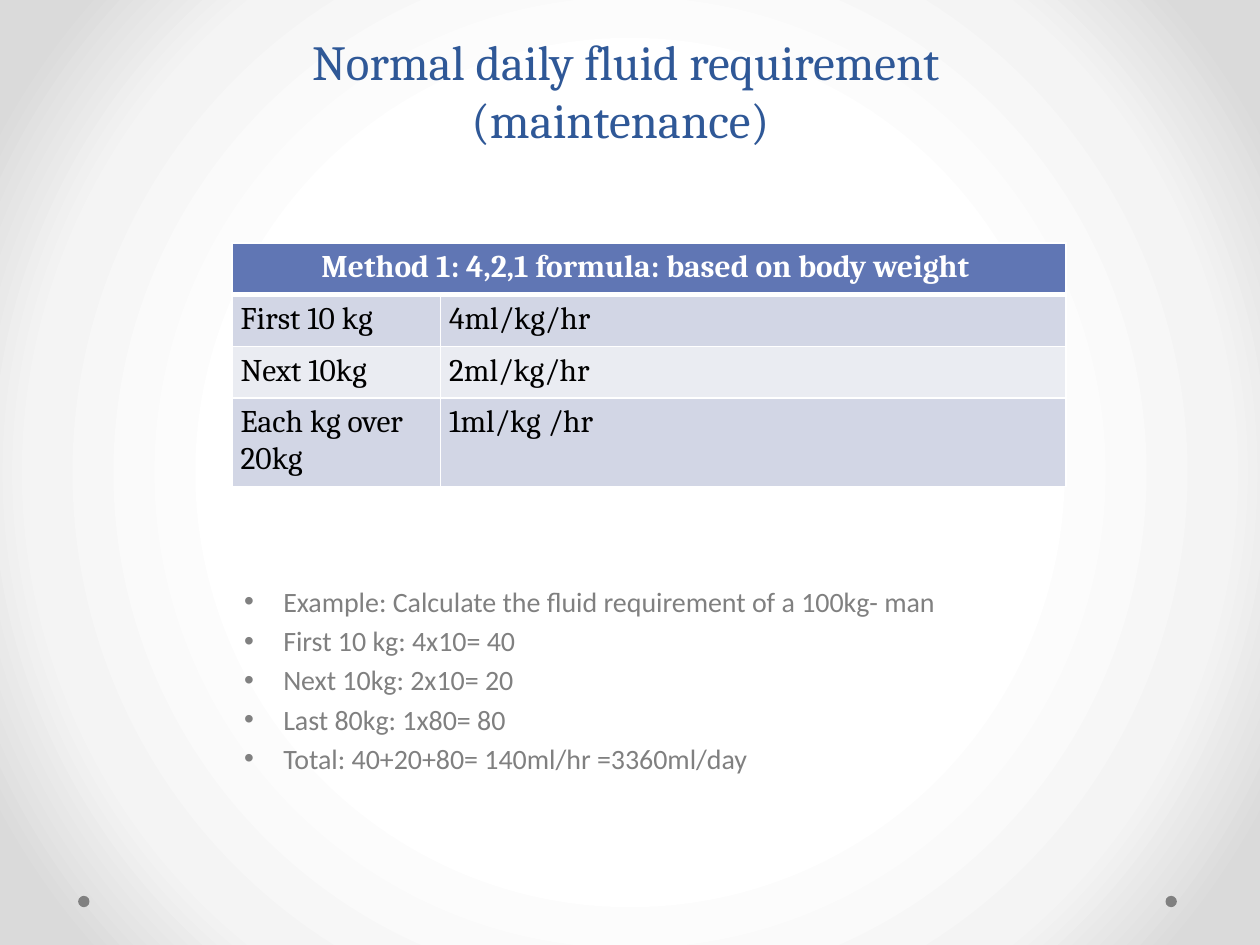
from lxml.etree import SubElement
from pptx import Presentation
from pptx.dml.color import RGBColor
from pptx.enum.shapes import MSO_SHAPE
from pptx.enum.text import MSO_ANCHOR, PP_ALIGN
from pptx.oxml import parse_xml
from pptx.oxml.ns import nsdecls, qn
from pptx.util import Inches, Pt

COLORS = {
    "title": "2F5897",
    "header": "6076B4",
    "odd_row": "D2D6E5",
    "even_row": "EAECF2",
    "white": "FFFFFF",
    "black": "000000",
    "gray": "808080",
}
GRADIENT_STOPS = [(50, "FFFFFF"), (76, "F4F4F4"), (92, "DADADA")]
TITLE = "Normal daily fluid requirement (maintenance) "
METHOD = "Method 1: 4,2,1 formula: based on body weight "
RATES = [
    ("First 10 kg", "4ml/kg/hr"),
    ("Next 10kg", "2ml/kg/hr"),
    ("Each kg over 20kg", "1ml/kg /hr"),
]
EXAMPLE = [
    "Example: Calculate the fluid requirement of a 100kg- man",
    "First 10 kg: 4x10= 40",
    "Next 10kg: 2x10= 20",
    "Last 80kg: 1x80= 80",
    "Total: 40+20+80= 140ml/hr =3360ml/day",
]


def color(name):
    return RGBColor.from_string(COLORS[name])


def format_paragraph(paragraph, font_name, size, color_name, bold=False):
    for run in paragraph.runs:
        run.font.name = font_name
        run.font.size = Pt(size)
        run.font.bold = bold
        run.font.color.rgb = color(color_name)


def set_background(slide):
    stops = "".join(
        f'<a:gs pos="{position * 1000}"><a:srgbClr val="{value}"/></a:gs>'
        for position, value in GRADIENT_STOPS
    )
    background = parse_xml(
        f'<p:bg {nsdecls("p", "a")}><p:bgPr><a:gradFill rotWithShape="1">'
        f'<a:gsLst>{stops}</a:gsLst><a:path path="circle">'
        '<a:fillToRect l="50000" t="50000" r="50000" b="50000"/></a:path>'
        "</a:gradFill><a:effectLst/></p:bgPr></p:bg>"
    )
    slide.element.find(qn("p:cSld")).insert(0, background)


def add_corner_dot(slide, left, top, size):
    dot = slide.shapes.add_shape(MSO_SHAPE.OVAL, left, top, size, size)
    dot.shadow.inherit = False
    dot.fill.solid()
    dot.fill.fore_color.rgb = color("gray")
    dot.line.fill.background()


def add_title(slide, left, top, width, height):
    text_frame = slide.shapes.add_textbox(left, top, width, height).text_frame
    text_frame.word_wrap = True
    text_frame.vertical_anchor = MSO_ANCHOR.BOTTOM
    text_frame.text = TITLE
    paragraph = text_frame.paragraphs[0]
    paragraph.alignment = PP_ALIGN.CENTER
    format_paragraph(paragraph, "Cambria", 28, "title")


def style_cell(cell, fill_name, color_name, bottom_width, bold):
    cell.margin_left = cell.margin_right = Inches(0.07)
    cell.margin_top = cell.margin_bottom = Inches(0.05)
    format_paragraph(cell.text_frame.paragraphs[0], "Cambria", 18, color_name, bold)
    properties = cell._tc.get_or_add_tcPr()
    for side, width in (("L", 1), ("R", 1), ("T", 1), ("B", bottom_width)):
        border = SubElement(properties, qn(f"a:ln{side}"), w=str(Pt(width)))
        fill = SubElement(border, qn("a:solidFill"))
        SubElement(fill, qn("a:srgbClr"), val=COLORS["white"])
    cell.fill.solid()
    cell.fill.fore_color.rgb = color(fill_name)


def add_rate_table(slide, left, top, width, row_height):
    row_count = len(RATES) + 1
    table = slide.shapes.add_table(
        row_count, 2, left, top, width, row_height * row_count
    ).table
    table.columns[0].width = width // 4
    table.columns[1].width = width - width // 4
    for row in table.rows:
        row.height = row_height
    header = table.cell(0, 0)
    header.merge(table.cell(0, 1))
    header.text_frame.text = METHOD
    header.text_frame.paragraphs[0].alignment = PP_ALIGN.CENTER
    for column in range(2):
        style_cell(table.cell(0, column), "header", "white", 3, True)
    for row, rate in enumerate(RATES, start=1):
        for column, text in enumerate(rate):
            cell = table.cell(row, column)
            cell.text_frame.text = text
            fill_name = "odd_row" if row % 2 else "even_row"
            style_cell(cell, fill_name, "black", 1, False)
            if row == 1:
                top_border = cell._tc.tcPr.find(qn("a:lnT"))
                top_border.set("w", str(Pt(3)))


def add_example(slide, left, top, width, height):
    text_frame = slide.shapes.add_textbox(left, top, width, height).text_frame
    text_frame.word_wrap = True
    text_frame.text = "\n".join(EXAMPLE)
    for paragraph in text_frame.paragraphs:
        format_paragraph(paragraph, "Calibri", 16, "gray")
        properties = paragraph._p.get_or_add_pPr()
        properties.set("marL", str(Inches(0.31)))
        properties.set("indent", str(-Inches(0.31)))
        spacing = SubElement(properties, qn("a:spcBef"))
        SubElement(spacing, qn("a:spcPct"), val="20000")
        SubElement(properties, qn("a:buFont"), typeface="Arial")
        SubElement(properties, qn("a:buChar"), char="•")


def main():
    presentation = Presentation()
    presentation.slide_width = Inches(10)
    presentation.slide_height = Inches(7.5)
    slide = presentation.slides.add_slide(presentation.slide_layouts[6])
    set_background(slide)
    for left in (9.25, 0.62):
        add_corner_dot(slide, Inches(left), Inches(7.11), Inches(0.09))
    add_title(slide, Inches(1.84), Inches(0.25), Inches(6.25), Inches(0.98))
    add_rate_table(slide, Inches(1.84), Inches(1.93), Inches(6.62), Inches(0.41))
    add_example(slide, Inches(1.84), Inches(4.59), Inches(6.84), Inches(2.35))
    presentation.save("out.pptx")


if __name__ == "__main__":
    main()
